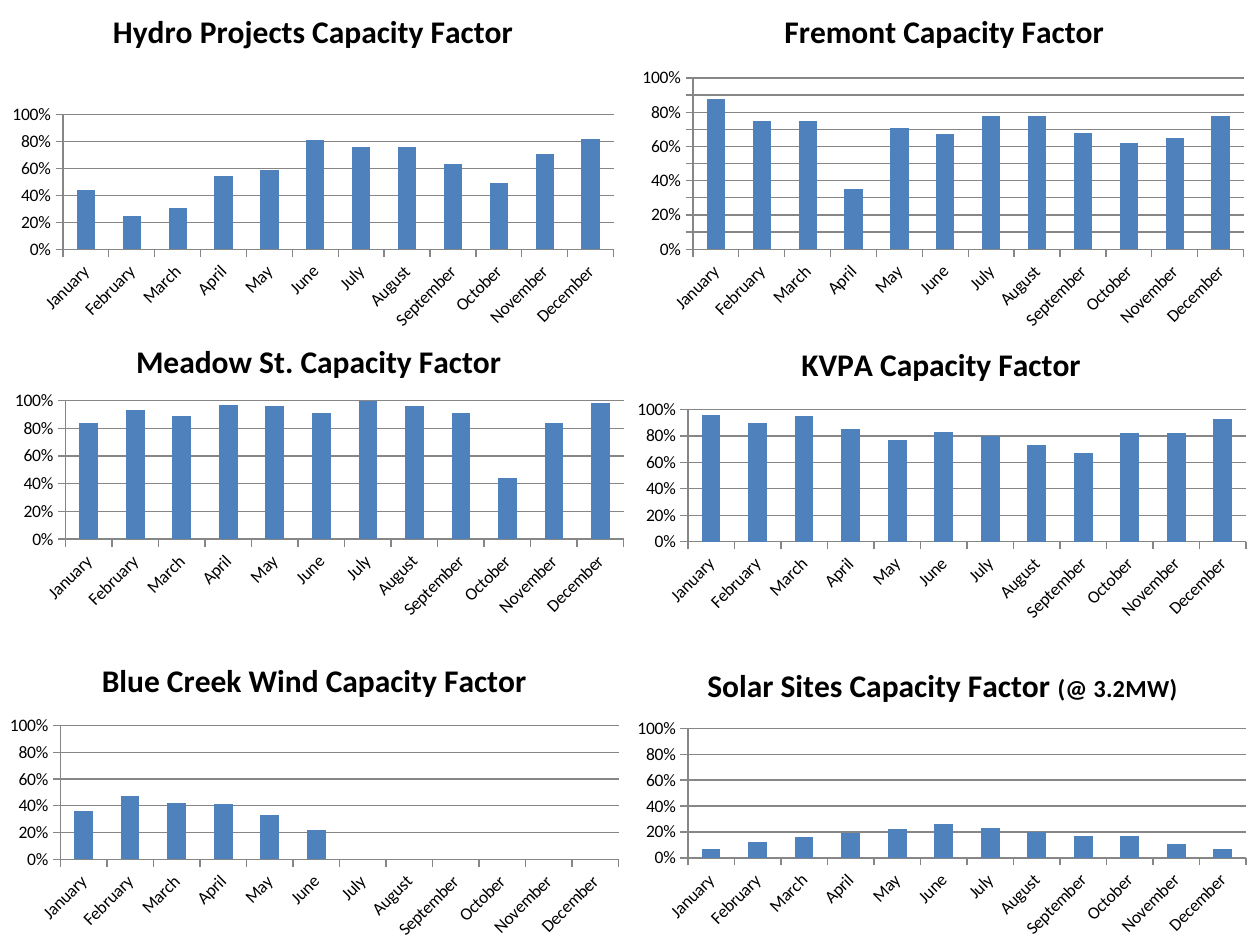
from dataclasses import dataclass

from lxml.etree import SubElement
from pptx import Presentation
from pptx.chart.data import CategoryChartData
from pptx.dml.color import RGBColor
from pptx.enum.chart import XL_CHART_TYPE, XL_TICK_MARK
from pptx.oxml.ns import qn
from pptx.util import Inches, Pt


@dataclass(frozen=True)
class Theme:
    font: str = "Calibri"
    text: RGBColor = RGBColor(0, 0, 0)
    bar: RGBColor = RGBColor(0x4F, 0x81, 0xBD)
    line: RGBColor = RGBColor(0x86, 0x86, 0x86)
    label_size: int = 10
    title_size: int = 18
    note_size: int = 14
    line_width: float = 0.75


THEME = Theme()
MONTHS = ["January", "February", "March", "April", "May", "June", "July",
          "August", "September", "October", "November", "December"]

# Title, small title note, chart frame, plot frame (left, top, width, height), axis step, values
CHARTS = [
    ("Hydro Projects Capacity Factor", "", (0, -0.08, 4.97, 2.75), (0.5, 0.91, 4.37, 1.07), 0.2,
     [0.44, 0.25, 0.31, 0.54, 0.59, 0.81, 0.76, 0.76, 0.63, 0.49, 0.71, 0.82]),
    ("Fremont Capacity Factor", "", (5.01, -0.08, 4.97, 2.75), (5.5, 0.62, 4.37, 1.36), 0.1,
     [0.88, 0.75, 0.75, 0.35, 0.71, 0.67, 0.78, 0.78, 0.68, 0.62, 0.65, 0.78]),
    ("Meadow St. Capacity Factor", "", (0.02, 2.55, 5.02, 2.42), (0.52, 3.18, 4.43, 1.1), 0.2,
     [0.84, 0.93, 0.89, 0.97, 0.96, 0.91, 1.03, 0.96, 0.91, 0.44, 0.84, 0.98]),
    ("KVPA Capacity Factor", "", (4.96, 2.57, 5.02, 2.42), (5.46, 3.25, 4.43, 1.05), 0.2,
     [0.96, 0.9, 0.95, 0.85, 0.77, 0.83, 0.8, 0.73, 0.67, 0.82, 0.82, 0.93]),
    ("Blue Creek Wind Capacity Factor", "", (-0.02, 5.08, 5.03, 2.42), (0.48, 5.76, 4.43, 1.06), 0.2,
     [0.36, 0.47, 0.42, 0.41, 0.33, 0.22] + [None] * 6),
    ("Solar Sites Capacity Factor ", "(@ 3.2MW)", (4.96, 5.15, 5.04, 2.34), (5.46, 5.78, 4.43, 1.03), 0.2,
     [0.07, 0.12, 0.16, 0.19, 0.22, 0.26, 0.23, 0.2, 0.17, 0.17, 0.11, 0.07]),
]


def add_text(para, text, size=THEME.title_size, bold=True, color=THEME.text):
    span = para.add_run()
    span.text = text
    span.font.name = THEME.font
    span.font.size = Pt(size)
    span.font.bold = bold
    span.font.color.rgb = color


def place_plot(chart, frame, plot):
    """Fix the inner plot area at a slide position, given in inches."""
    area = chart._chartSpace.chart.plotArea
    for old in area.findall(qn("c:layout")):
        area.remove(old)
    layout = SubElement(area, qn("c:layout"))
    area.insert(0, layout)
    manual = SubElement(layout, qn("c:manualLayout"))
    left, top, width, height = frame
    settings = {
        "layoutTarget": "inner", "xMode": "edge", "yMode": "edge",
        "x": (plot[0] - left) / width, "y": (plot[1] - top) / height,
        "w": plot[2] / width, "h": plot[3] / height,
    }
    for name, value in settings.items():
        text = value if isinstance(value, str) else f"{value:.4f}"
        SubElement(manual, qn(f"c:{name}")).set("val", text)


deck = Presentation()
deck.slide_width, deck.slide_height = Inches(10), Inches(7.5)
page = deck.slides.add_slide(deck.slide_layouts[6])

for title, note, frame, plot_frame, step, values in CHARTS:
    data = CategoryChartData(number_format="0%")
    data.categories = MONTHS
    data.add_series(title.strip(), values)
    chart = page.shapes.add_chart(
        XL_CHART_TYPE.COLUMN_CLUSTERED, *map(Inches, frame), data).chart
    chart.has_legend = False
    chart.font.name = THEME.font
    chart.font.size = Pt(THEME.label_size)
    chart.font.color.rgb = THEME.text

    chart.has_title = True
    chart.chart_title.include_in_layout = False
    para = chart.chart_title.text_frame.paragraphs[0]
    add_text(para, title)
    if note:
        add_text(para, note, size=THEME.note_size)

    bars = chart.plots[0]
    bars.gap_width = 150
    bars.vary_by_categories = False
    fill = bars.series[0].format.fill
    fill.solid()
    fill.fore_color.rgb = THEME.bar

    months, percent = chart.category_axis, chart.value_axis
    percent.minimum_scale, percent.maximum_scale = 0, 1
    percent.major_unit = step
    percent.has_major_gridlines = True
    percent.tick_labels.number_format = "0%"
    percent.tick_labels.number_format_is_linked = False
    for axis in (months, percent):
        axis.major_tick_mark = XL_TICK_MARK.OUTSIDE
        axis.minor_tick_mark = XL_TICK_MARK.NONE
        axis.tick_labels.font.size = Pt(THEME.label_size)
    for part in (months, percent, percent.major_gridlines):
        part.format.line.color.rgb = THEME.line
        part.format.line.width = Pt(THEME.line_width)
    label_body = months._element.find(qn("c:txPr")).find(qn("a:bodyPr"))
    label_body.set("rot", "-2700000")
    label_body.set("vert", "horz")
    place_plot(chart, frame, plot_frame)

deck.save("out.pptx")
